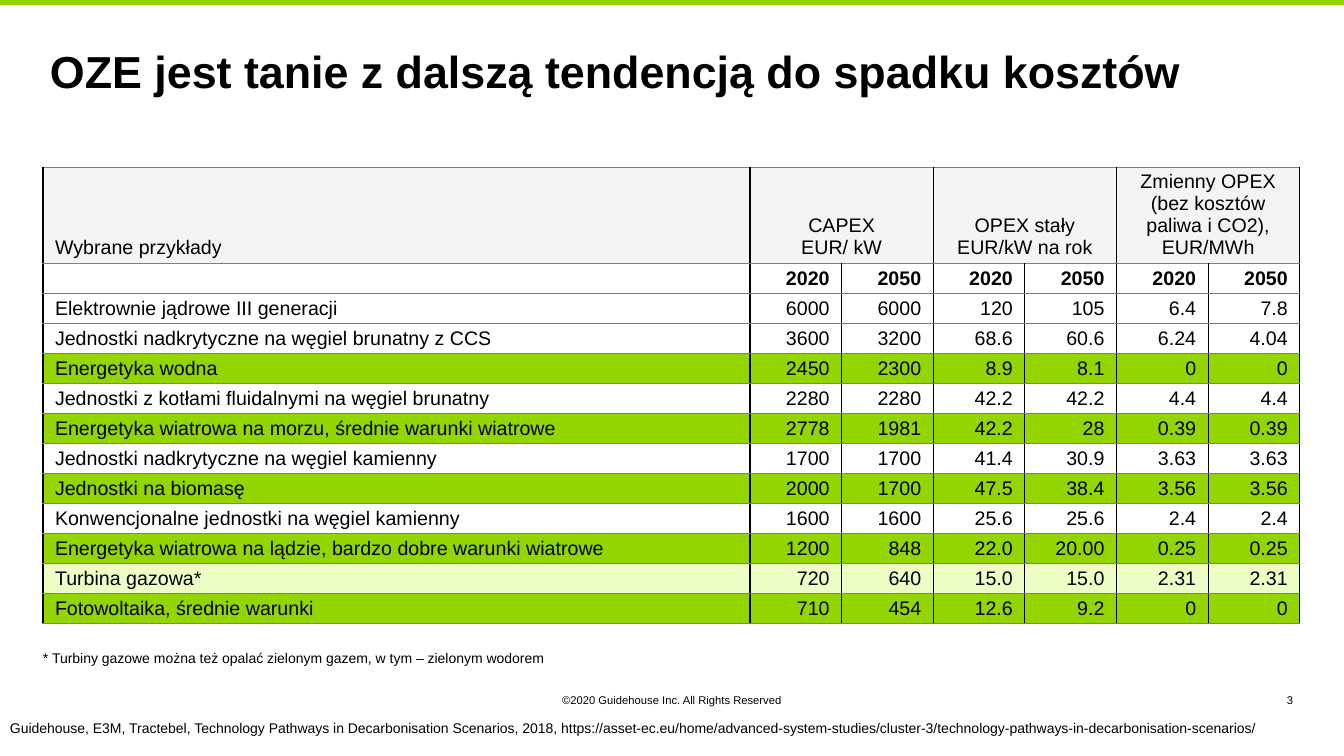
"""Build the slide comparing renewable and conventional energy costs."""
from dataclasses import dataclass

from lxml import etree
from pptx import Presentation
from pptx import util as u
from pptx.dml.color import RGBColor
from pptx.enum import shapes, text
from pptx.oxml import ns

FONT = "Arial"
BLACK = RGBColor(0x00, 0x00, 0x00)
GREY = RGBColor(0x7F, 0x7F, 0x7F)
PALE_GREY = RGBColor(0xF4, 0xF4, 0xF4)
GREEN = RGBColor(0x93, 0xD5, 0x00)
PALE_GREEN = RGBColor(0xED, 0xFF, 0xC4)

LEFT, CENTER, RIGHT = text.PP_ALIGN.LEFT, text.PP_ALIGN.CENTER, text.PP_ALIGN.RIGHT
TOP, BOTTOM = text.MSO_ANCHOR.TOP, text.MSO_ANCHOR.BOTTOM

PAGE_WIDTH, PAGE_HEIGHT = 1344, 756
TABLE_LEFT, TABLE_TOP = 43, 167
LABEL_WIDTH, VALUES_WIDTH = 707, 550
HEADER_HEIGHT, ROW_HEIGHT = 96, 30
TABLE_SIZE = 14


@dataclass(frozen=True)
class Caption:
    """A free text line with its place in px and its type settings."""
    words: str
    left: int
    top: int
    width: int
    height: int
    size: int
    align: text.PP_ALIGN = LEFT
    anchor: text.MSO_ANCHOR = TOP
    bold: bool = False
    spacing: float = 1.0
    wrap: bool = True
    inset_x: int = 0
    inset_y: int = 0


@dataclass(frozen=True)
class CostRow:
    """One table row: label, space-separated values, fill and weight."""
    label: str
    values: str
    fill: RGBColor | None = None
    bold: bool = False


CAPTIONS = (
    Caption("3", 1249, 687, 44, 20, 8, RIGHT, BOTTOM),
    Caption("©2020 Guidehouse Inc. All Rights Reserved", 351, 687, 642, 20, 8,
            CENTER, BOTTOM, spacing=0.86),
    Caption("OZE jest tanie z dalszą tendencją do spadku kosztów",
            50, 50, 1243, 43, 32, bold=True, spacing=0.9),
    Caption("* Turbiny gazowe można też opalać zielonym gazem, w tym – zielonym wodorem",
            43, 650, 502, 20, 10, wrap=False),
    Caption("Guidehouse, E3M, Tractebel, Technology Pathways in Decarbonisation Scenarios, "
            "2018, https://asset-ec.eu/home/advanced-system-studies/cluster-3/"
            "technology-pathways-in-decarbonisation-scenarios/",
            0, 714, 1300, 44, 10, inset_x=10, inset_y=5),
)

GROUPS = (
    ("CAPEX", "EUR/ kW"),
    ("OPEX stały EUR/kW na rok",),
    ("Zmienny OPEX (bez kosztów paliwa i CO2), EUR/MWh",),
)

ROWS = (
    CostRow("", "2020 2050 2020 2050 2020 2050", bold=True),
    CostRow("Elektrownie jądrowe III generacji", "6000 6000 120 105 6.4 7.8"),
    CostRow("Jednostki nadkrytyczne na węgiel brunatny z CCS",
            "3600 3200 68.6 60.6 6.24 4.04"),
    CostRow("Energetyka wodna", "2450 2300 8.9 8.1 0 0", GREEN),
    CostRow("Jednostki z kotłami fluidalnymi na węgiel brunatny",
            "2280 2280 42.2 42.2 4.4 4.4"),
    CostRow("Energetyka wiatrowa na morzu, średnie warunki wiatrowe",
            "2778 1981 42.2 28 0.39 0.39", GREEN),
    CostRow("Jednostki nadkrytyczne na węgiel kamienny",
            "1700 1700 41.4 30.9 3.63 3.63"),
    CostRow("Jednostki na biomasę", "2000 1700 47.5 38.4 3.56 3.56", GREEN),
    CostRow("Konwencjonalne jednostki na węgiel kamienny",
            "1600 1600 25.6 25.6 2.4 2.4"),
    CostRow("Energetyka wiatrowa na lądzie, bardzo dobre warunki wiatrowe",
            "1200 848 22.0 20.00 0.25 0.25", GREEN),
    CostRow("Turbina gazowa*", "720 640 15.0 15.0 2.31 2.31", PALE_GREEN),
    CostRow("Fotowoltaika, średnie warunki", "710 454 12.6 9.2 0 0", GREEN),
)


def px(length: int) -> u.Emu:
    """Turn px into EMU."""
    return u.Emu(length * 12192000 // PAGE_WIDTH)


def add_span(para, words: str, size: int, bold: bool = False) -> None:
    """Add one run in the slide font."""
    span = para.add_run()
    span.text = words
    span.font.name = FONT
    span.font.size = u.Pt(size)
    span.font.bold = bold
    span.font.color.rgb = BLACK


def draw_caption(page, caption: Caption) -> None:
    """Draw a caption as a text box."""
    box = page.shapes.add_textbox(px(caption.left), px(caption.top),
                                  px(caption.width), px(caption.height))
    frame = box.text_frame
    frame.word_wrap = caption.wrap
    frame.vertical_anchor = caption.anchor
    frame.margin_left = frame.margin_right = px(caption.inset_x)
    frame.margin_top = frame.margin_bottom = px(caption.inset_y)
    para = frame.paragraphs[0]
    para.alignment = caption.align
    para.line_spacing = caption.spacing
    add_span(para, caption.words, caption.size, caption.bold)


def draw_top_bar(page) -> None:
    """Draw the green bar along the top edge."""
    bar = page.shapes.add_shape(shapes.MSO_SHAPE.ROUNDED_RECTANGLE,
                                0, 0, px(PAGE_WIDTH), px(5))
    bar.shadow.inherit = False
    bar.fill.solid()
    bar.fill.fore_color.rgb = GREEN
    bar.line.fill.background()


def add_borders(cell) -> None:
    """Give a cell black sides and grey top and bottom lines."""
    properties = cell._tc.get_or_add_tcPr()
    sides = (("a:lnL", BLACK, 1), ("a:lnR", BLACK, 1),
             ("a:lnT", GREY, 0.75), ("a:lnB", GREY, 0.75))
    for place, (tag, color, width) in enumerate(sides):
        line = etree.Element(ns.qn(tag), w=str(u.Pt(width)))
        fill = etree.SubElement(line, ns.qn("a:solidFill"))
        etree.SubElement(fill, ns.qn("a:srgbClr"), val=str(color))
        properties.insert(place, line)


def fill_cell(cell, lines: tuple[str, ...], align: text.PP_ALIGN,
              fill: RGBColor | None, bold: bool = False) -> None:
    """Set the text, fill and borders of a cell."""
    cell.vertical_anchor = BOTTOM
    cell.margin_left = cell.margin_right = px(12)
    cell.margin_top, cell.margin_bottom = px(3), px(4)
    if fill is None:
        cell.fill.background()
    else:
        cell.fill.solid()
        cell.fill.fore_color.rgb = fill
    add_borders(cell)
    frame = cell.text_frame
    for index, words in enumerate(lines):
        para = frame.add_paragraph() if index else frame.paragraphs[0]
        para.alignment = align
        if words:
            add_span(para, words, TABLE_SIZE, bold)
        else:
            etree.SubElement(para._p, ns.qn("a:endParaRPr"), sz=str(TABLE_SIZE * 100))


def draw_cost_table(page) -> None:
    """Draw the table of capital and operating costs."""
    value_count = 2 * len(GROUPS)
    height = HEADER_HEIGHT + ROW_HEIGHT * len(ROWS)
    table = page.shapes.add_table(
        len(ROWS) + 1, value_count + 1, px(TABLE_LEFT), px(TABLE_TOP),
        px(LABEL_WIDTH + VALUES_WIDTH), px(height)).table
    table.first_row = table.horz_banding = False
    for index, column in enumerate(table.columns):
        column.width = px(VALUES_WIDTH) // value_count if index else px(LABEL_WIDTH)
    for index, row in enumerate(table.rows):
        row.height = px(ROW_HEIGHT if index else HEADER_HEIGHT)

    fill_cell(table.cell(0, 0), ("Wybrane przykłady",), LEFT, PALE_GREY)
    for index, lines in enumerate(GROUPS):
        first, last = table.cell(0, 2 * index + 1), table.cell(0, 2 * index + 2)
        first.merge(last)
        fill_cell(first, lines, CENTER, PALE_GREY)
        fill_cell(last, ("",), CENTER, PALE_GREY)
    for index, row in enumerate(ROWS, start=1):
        for place, words in enumerate((row.label, *row.values.split())):
            fill_cell(table.cell(index, place), (words,),
                      RIGHT if place else LEFT, row.fill, row.bold)


def main() -> None:
    """Build and save the deck."""
    deck = Presentation()
    deck.slide_width, deck.slide_height = px(PAGE_WIDTH), px(PAGE_HEIGHT)
    page = deck.slides.add_slide(deck.slide_layouts[6])
    draw_top_bar(page)
    draw_cost_table(page)
    for caption in CAPTIONS:
        draw_caption(page, caption)
    deck.save("out.pptx")


if __name__ == "__main__":
    main()
